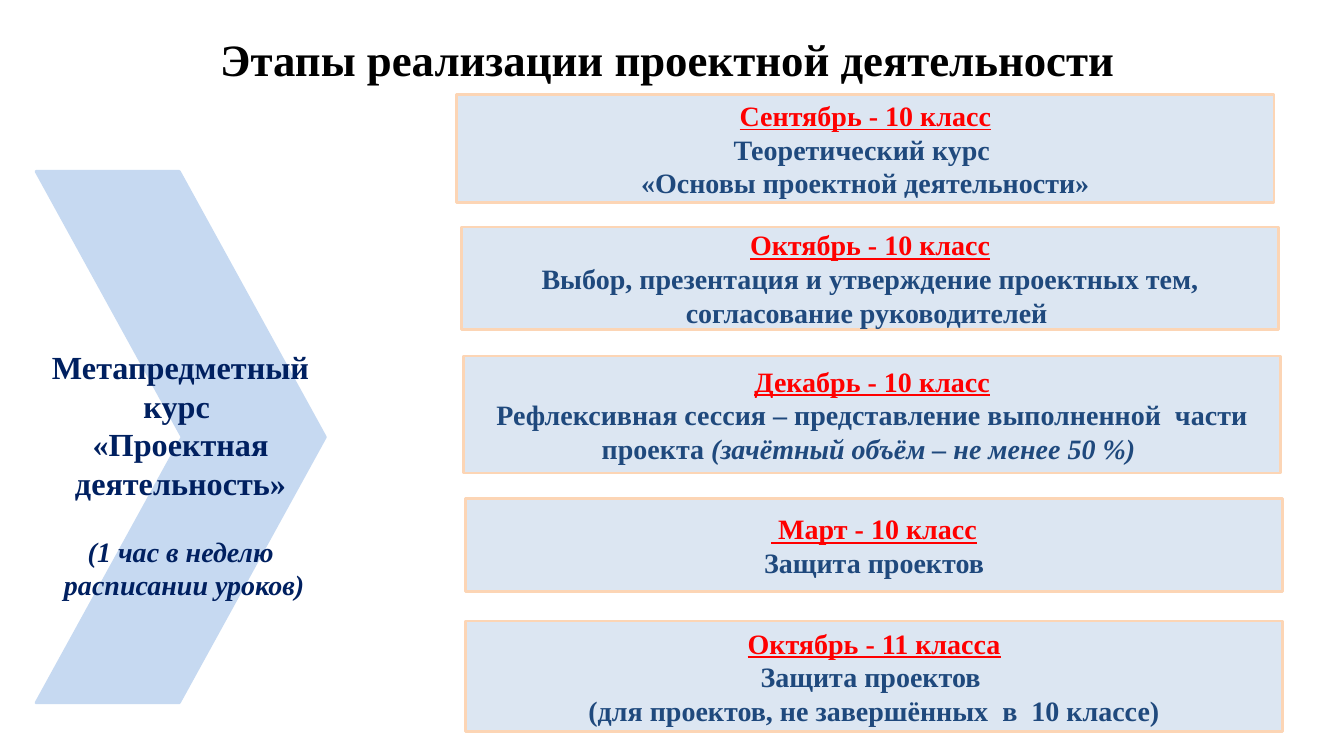
from pptx import Presentation
from pptx.dml.color import RGBColor
from pptx.enum.shapes import MSO_SHAPE
from pptx.enum.text import MSO_ANCHOR, MSO_AUTO_SIZE, PP_ALIGN
from pptx.util import Cm, Pt

COLORS = {
    "title": "000000", "navy": "002060", "arrow": "C6D9F1",
    "box": "DCE6F2", "edge": "FCD5B5", "month": "FF0000", "text": "1F497D",
}


class Deck:
    font = "Times New Roman"

    def __init__(self):
        self.prs = Presentation()
        self.prs.slide_width, self.prs.slide_height = Cm(33.87), Cm(19.05)
        self.slide = self.prs.slides.add_slide(self.prs.slide_layouts[5])

    def color(self, name):
        return RGBColor.from_string(COLORS[name])

    def run(self, par, text, size, color, italic=None, line=None):
        par.alignment = PP_ALIGN.CENTER
        run = par.add_run()
        run.text = text
        font = run.font
        font.name, font.size, font.bold = self.font, Pt(size), True
        font.italic, font.underline = italic, line
        font.color.rgb = self.color(color)

    def title(self, text, *area):
        shape = self.slide.shapes.title
        shape.left, shape.top, shape.width, shape.height = map(Cm, area)
        frame = shape.text_frame
        frame.auto_size = MSO_AUTO_SIZE.NONE
        frame.vertical_anchor = MSO_ANCHOR.TOP
        self.run(frame.paragraphs[0], text, 32, "title")

    def shape(self, kind, area, fill, edge):
        shape = self.slide.shapes.add_shape(kind, *map(Cm, area))
        shape.shadow.inherit = False
        shape.fill.solid()
        shape.fill.fore_color.rgb = self.color(fill)
        shape.line.color.rgb = self.color(edge)
        shape.line.width = Pt(2)
        shape.text_frame.word_wrap = True
        shape.text_frame.vertical_anchor = MSO_ANCHOR.MIDDLE
        return shape

    def arrow(self, area, name, note):
        shape = self.shape(MSO_SHAPE.CHEVRON, area, "arrow", "arrow")
        shape.adjustments[0] = 0.505
        frame = shape.text_frame
        frame.margin_top = Cm(2)
        for i, text in enumerate(name + note):
            par = frame.add_paragraph() if i else frame.paragraphs[0]
            small = i >= len(name)
            if i == len(name):
                par.space_before = Pt(23)
            self.run(par, text, 20 if small else 23, "navy", italic=small)

    def stage(self, area, month, lines):
        frame = self.shape(MSO_SHAPE.RECTANGLE, area, "box", "edge").text_frame
        self.run(frame.paragraphs[0], month, 20, "month", line=True)
        for text, *note in lines:
            par = frame.add_paragraph()
            self.run(par, text, 20, "text")
            for part in note:
                self.run(par, part, 20, "text", italic=True)


# Left, top, height, month, then lines of (plain text, italic text)
STAGES = [
    (11.51, 2.39, 2.72, "Сентябрь - 10 класс",
     [("Теоретический курс ",), ("«Основы проектной деятельности»",)]),
    (11.63, 5.72, 2.59, "Октябрь - 10 класс",
     [("Выбор, презентация и утверждение проектных тем, "
       "согласование руководителей ",)]),
    (11.68, 8.97, 2.95, "Декабрь - 10 класс",
     [("Рефлексивная сессия – представление выполненной  части проекта ",
       "(зачётный объём – не менее 50 %) ")]),
    (11.73, 12.57, 2.34, " Март - 10 класс", [("Защита проектов",)]),
    (11.73, 15.65, 2.79, "Октябрь - 11 класса",
     [("Защита проектов ",),
      ("(для проектов, не завершённых  в  10 классе)",)]),
]


def main():
    deck = Deck()
    # Heading
    deck.title("Этапы реализации проектной деятельности", 4.9, 0.66, 23.85, 1.78)
    # Course arrow
    deck.arrow((0.91, 4.32, 7.29, 13.39),
               ["Метапредметный", "курс ", "«Проектная деятельность»"],
               ["(1 час в неделю", " расписании уроков)"])
    # Stages
    for left, top, height, month, lines in STAGES:
        deck.stage((left, top, 20.6, height), month, lines)
    deck.prs.save("out.pptx")


if __name__ == "__main__":
    main()
